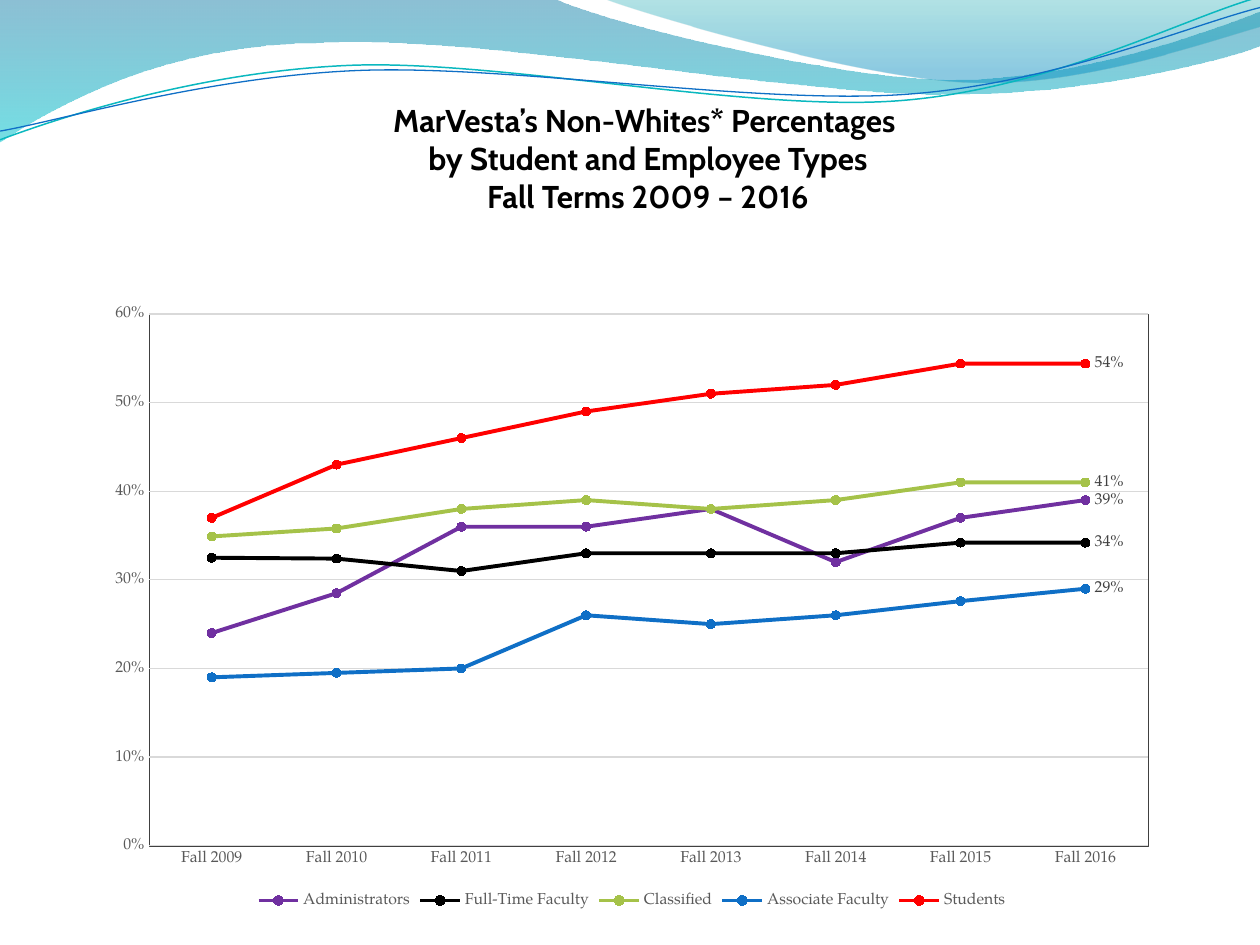
from lxml.etree import SubElement
from pptx import Presentation
from pptx.chart.data import CategoryChartData as Data
from pptx.dml.color import RGBColor
from pptx.enum.chart import (
    XL_CHART_TYPE as Kind, XL_LABEL_POSITION as Side, XL_LEGEND_POSITION as Spot,
    XL_MARKER_STYLE as Mark, XL_TICK_MARK as Tick)
from pptx.enum.text import MSO_ANCHOR as Anchor, MSO_AUTO_SIZE as Fit, PP_ALIGN as Align
from pptx.oxml import parse_xml
from pptx.oxml.ns import nsdecls, qn
from pptx.util import Pt

SERIF = "TeX Gyre Pagella"
TITLE = "MarVesta’s Non-Whites* Percentages \vby Student and Employee Types\vFall Terms 2009 – 2016"

BANDS = [
    ([(0, -0.7), (316.8, -0.7), (342.7, 12.2, 478.1, 45.4, 545.8, 45.4),
      (614.2, 45.4, 689.8, 18.7, 720, 6.5), (720.7, 25.9),
      (707.8, 31.7, 626.4, 54.7, 537.1, 54), (447.8, 54, 275, 20.2, 185, 24.5),
      (92.9, 25.2, 33.1, 59.8, -0.7, 81.4)],
     [(0, "0074A1", 45), (1, "00C6CF", 55)]),
    ([(344.9, -0.7), (366.5, 7.9, 491, 44.6, 553.7, 46.8),
      (616.3, 49.7, 691.9, 23, 720, 15.1), (720, 0)],
     [(0, "00A1A9", 30), (0.8, "008BBF", 45)]),
]
WAVES = [
    ([(0, 79.9), (34.6, 67, 113.8, 41, 199.4, 37.4), (284.4, 33.8, 427, 64.1, 513.4, 57.6),
      (599.8, 51.1, 675.4, 10.8, 718.6, -1.4)], "0AB8BF", 0.85),
    ([(0, 74.9), (33.8, 69.1, 118.1, 43.9, 203.8, 40.3), (290.2, 36.7, 429.8, 59.8, 516.2, 54),
      (601.9, 48.2, 677.5, 15.1, 720, 4.3)], "0F6FC6", 0.75),
]
ROWS = [
    ("Administrators", "7030A0", [0.24, 0.285, 0.36, 0.36, 0.38, 0.32, 0.37, 0.39]),
    ("Full-Time Faculty", "000000", [0.325, 0.324, 0.31, 0.33, 0.33, 0.33, 0.342, 0.342]),
    ("Classified", "A5C249", [0.349, 0.358, 0.38, 0.39, 0.38, 0.39, 0.41, 0.41]),
    ("Associate Faculty", "0F6FC6", [0.19, 0.195, 0.2, 0.26, 0.25, 0.26, 0.276, 0.29]),
    ("Students", "FF0000", [0.37, 0.43, 0.46, 0.49, 0.51, 0.52, 0.544, 0.544]),
]


def rgb(code):
    return RGBColor.from_string(code)


def put(item, vals):
    for key, val in vals.items():
        setattr(item, key, val)


def style(font, size, color, name=SERIF, bold=False):
    put(font, {"size": Pt(size), "name": name, "bold": bold})
    font.color.rgb = rgb(color)


def stroke(line, color, width):
    line.color.rgb = rgb(color)
    line.width = Pt(width)


def bend(shape, parts):
    steps = iter(list(shape._element.iter(qn("a:lnTo"))))
    for part in parts[1:]:
        first = next(steps)
        if len(part) == 6:
            first.tag = qn("a:cubicBezTo")
            for _ in range(2):
                step = next(steps)
                first.append(step[0])
                step.getparent().remove(step)


def draw(slide, parts, close):
    dots = [(Pt(part[i]), Pt(part[i + 1])) for part in parts for i in range(0, len(part), 2)]
    pen = slide.shapes.build_freeform(*dots[0])
    pen.add_line_segments(dots[1:], close=close)
    shape = pen.convert_to_shape()
    shape.shadow.inherit = False
    bend(shape, parts)
    return shape


def add_band(slide, parts, stops):
    shape = draw(slide, parts, True)
    shape.line.fill.background()
    fill = shape.fill
    fill.gradient()
    fill.gradient_angle = 270
    for stop, (place, color, _) in zip(fill.gradient_stops, stops):
        stop.position = place
        stop.color.rgb = rgb(color)
    for node, (_, _, alpha) in zip(shape._element.spPr.iter(qn("a:srgbClr")), stops):
        SubElement(node, qn("a:alpha")).set("val", str(alpha * 1000))


def add_wave(slide, parts, color, width):
    shape = draw(slide, parts, False)
    shape.fill.background()
    stroke(shape.line, color, width)


def add_title(slide):
    title = slide.shapes.title
    put(title, {"left": Pt(84), "top": Pt(42), "width": Pt(572.5), "height": Pt(80.5)})
    frame = title.text_frame
    put(frame, {"margin_left": 0, "margin_right": 0, "margin_top": Pt(3.6),
                "margin_bottom": 0, "vertical_anchor": Anchor.BOTTOM,
                "word_wrap": True, "auto_size": Fit.NONE})
    frame.text = TITLE
    para = frame.paragraphs[0]
    para.alignment = Align.CENTER
    for run in para.runs:
        style(run.font, 18, "000000", "Cabin", True)


def frame_plot(chart):
    area = chart._chartSpace.chart.plotArea
    for old in area.findall(qn("c:layout")):
        area.remove(old)
    spots = "".join(f'<c:{tag} val="{val}"/>' for tag, val in [
        ("layoutTarget", "inner"), ("xMode", "edge"), ("yMode", "edge"),
        ("x", 0.051), ("y", 0.033), ("w", 0.929), ("h", 0.858)])
    area.insert(0, parse_xml(
        f'<c:layout {nsdecls("c")}><c:manualLayout>{spots}</c:manualLayout></c:layout>'))
    area.append(parse_xml(
        f'<c:spPr {nsdecls("c", "a")}><a:noFill/><a:ln w="{Pt(0.25)}"><a:solidFill>'
        '<a:srgbClr val="404040"/></a:solidFill></a:ln></c:spPr>'))


def paint(row, color):
    row.smooth = False
    stroke(row.format.line, color, 2.25)
    mark = row.marker
    put(mark, {"style": Mark.CIRCLE, "size": 5})
    mark.format.fill.solid()
    mark.format.fill.fore_color.rgb = rgb(color)
    stroke(mark.format.line, color, 0.75)
    label = row.points[7].data_label
    style(label.font, 9, "404040")
    label.position = Side.RIGHT
    row.data_labels.show_value = False


def add_chart(slide):
    data = Data(number_format="0%")
    data.categories = [f"Fall {year}" for year in range(2009, 2017)]
    for name, _, vals in ROWS:
        data.add_series(name, vals)
    chart = slide.shapes.add_chart(
        Kind.LINE_MARKERS, Pt(54), Pt(167.8), Pt(614.2), Pt(354.2), data).chart
    put(chart, {"has_title": False, "has_legend": True})
    style(chart.font, 10, "000000")
    put(chart.legend, {"position": Spot.BOTTOM, "include_in_layout": False})
    style(chart.legend.font, 9, "595959")
    cat, val = chart.category_axis, chart.value_axis
    for axis in (cat, val):
        put(axis, {"major_tick_mark": Tick.NONE, "minor_tick_mark": Tick.NONE})
        style(axis.tick_labels.font, 9, "595959")
    stroke(cat.format.line, "D9D9D9", 0.75)
    put(val, {"minimum_scale": 0, "maximum_scale": 0.6, "major_unit": 0.1,
              "has_major_gridlines": True})
    put(val.tick_labels, {"number_format": "0%", "number_format_is_linked": False})
    val.format.line.fill.background()
    stroke(val.major_gridlines.format.line, "D9D9D9", 0.75)
    plot = chart.plots[0]
    plot.vary_by_categories = False
    for row, (_, color, _) in zip(plot.series, ROWS):
        paint(row, color)
    frame_plot(chart)


def main():
    deck = Presentation()
    put(deck, {"slide_width": Pt(720), "slide_height": Pt(540)})
    slide = deck.slides.add_slide(deck.slide_layouts[5])
    for band in BANDS:
        add_band(slide, *band)
    for wave in WAVES:
        add_wave(slide, *wave)
    add_title(slide)
    add_chart(slide)
    deck.save("out.pptx")


if __name__ == "__main__":
    main()
